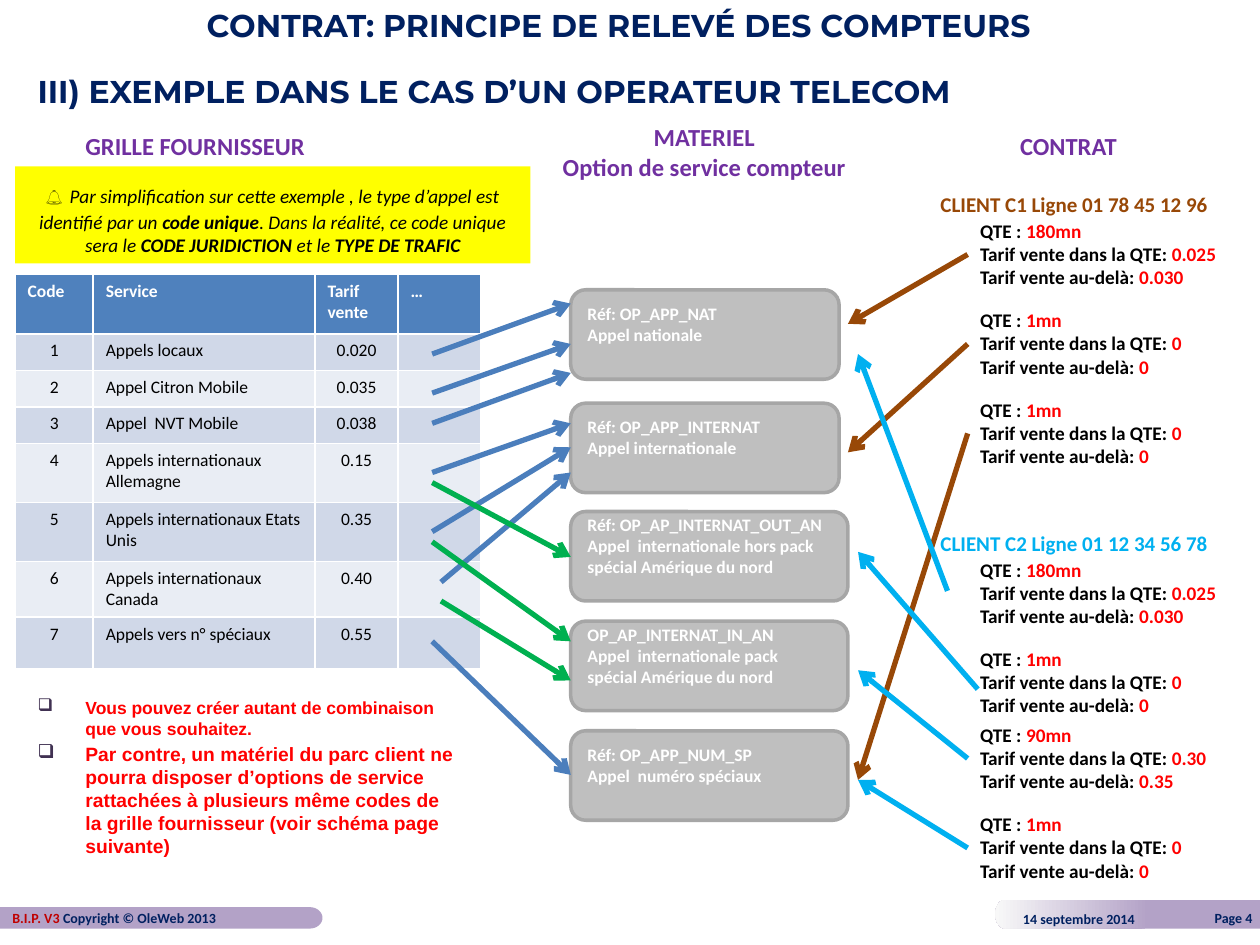
from math import cos, pi, sin

from lxml.etree import SubElement
from pptx import Presentation
from pptx.dml.color import RGBColor
from pptx.enum.shapes import MSO_CONNECTOR, MSO_SHAPE
from pptx.enum.text import MSO_ANCHOR as Anchor, MSO_AUTO_SIZE, PP_ALIGN as Align
from pptx.oxml.ns import qn
from pptx.util import Inches, Pt

COLOURS = {
    "navy": "002060", "purple": "7030A0", "lilac": "B3A2C7", "mist": "F8F8F8",
    "white": "FFFFFF", "black": "000000", "red": "FF0000", "dark red": "C00000",
    "yellow": "FFFF00", "header": "4F81BD", "odd": "D0D8E8", "even": "E9EDF4",
    "box": "BFBFBF", "box edge": "A6A6A6", "bullet": "403152",
    "blue": "4B7EBC", "green": "00B050", "brown": "984807", "cyan": "00B0F0",
}


def rgb(name):
    return RGBColor.from_string(COLOURS[name])


class SlideBuilder:
    font = "Calibri"
    arrow_width = Pt(3)

    def __init__(self, slide):
        self.slide = slide
        self.shapes = slide.shapes

    def fill_text(self, frame, paragraphs, size, colour="black", bold=True,
                  align=Align.LEFT, font=None, anchor=Anchor.TOP):
        """Each paragraph is a string or a list of (text, run colour)."""
        frame.word_wrap = True
        frame.vertical_anchor = anchor
        for index, content in enumerate(paragraphs):
            paragraph = frame.add_paragraph() if index else frame.paragraphs[0]
            runs = [(content, None)] if isinstance(content, str) else content
            for text, run_colour in runs:
                run = paragraph.add_run()
                run.text = text
                if run_colour:
                    run.font.color.rgb = rgb(run_colour)
            paragraph.alignment = align
            self.style(paragraph.font, size, bold, font)
            if len(runs) == 1:
                paragraph.font.color.rgb = rgb(runs[0][1] or colour)

    def style(self, font, size, bold, name=None):
        font.name, font.size, font.bold = name or self.font, Pt(size), bold

    def title(self, text, left, top, width, height):
        title = self.shapes.title
        title.left, title.top = Inches(left), Inches(top)
        title.width, title.height = Inches(width), Inches(height)
        title.text_frame.auto_size = MSO_AUTO_SIZE.NONE
        self.fill_text(title.text_frame, [text], 18, "navy", font="Montserrat")

    def text(self, left, top, width, height, paragraphs, size, **style):
        area = map(Inches, (left, top, width, height))
        frame = self.shapes.add_textbox(*area).text_frame
        self.fill_text(frame, paragraphs, size, **style)
        return frame

    def bullets(self, left, top, width, height, items):
        frame = self.text(left, top, width, height, [], 10)
        for index, (text, size) in enumerate(items):
            paragraph = frame.add_paragraph() if index else frame.paragraphs[0]
            paragraph.text = text
            if index:
                paragraph.space_before = Pt(2)
            properties = paragraph._p.get_or_add_pPr()
            properties.set("marL", str(Inches(0.38)))
            properties.set("indent", str(-Inches(0.38)))
            bullet_colour = SubElement(properties, qn("a:buClr"))
            SubElement(bullet_colour, qn("a:srgbClr"), val=COLOURS["bullet"])
            SubElement(properties, qn("a:buChar"), char="❑")
            self.style(paragraph.font, size, True, "Arial")
            paragraph.font.color.rgb = rgb("red")

    def shape(self, kind, left, top, width, height, fill, edge=None):
        shape = self.shapes.add_shape(kind, *map(Inches, (left, top, width, height)))
        shape.shadow.inherit = False
        shape.fill.solid()
        shape.fill.fore_color.rgb = rgb(fill)
        if edge:
            shape.line.color.rgb = rgb(edge)
            shape.line.width = Pt(2)
        else:
            shape.line.fill.background()
        return shape

    def option(self, top, width, lines):
        box = self.shape(MSO_SHAPE.ROUNDED_RECTANGLE, 4.53, top, width, 0.71,
                         "box", "box edge")
        box.text_frame.margin_bottom = Inches(0.22)
        self.fill_text(box.text_frame, lines, 10, "white", anchor=Anchor.MIDDLE)

    def arrow(self, colour, x1, y1, x2, y2):
        arrow = self.shapes.add_connector(
            MSO_CONNECTOR.STRAIGHT, *map(Inches, (x1, y1, x2, y2)))
        arrow.line.color.rgb = rgb(colour)
        arrow.line.width = self.arrow_width
        SubElement(arrow.line._get_or_add_ln(), qn("a:tailEnd"), type="arrow")
        SubElement(arrow._element.spPr, qn("a:effectLst"))

    def band(self, flat_x, round_x, top, bottom, bulge):
        """Footer band with one flat end and one rounded end."""
        middle, radius = (top + bottom) / 2, (bottom - top) / 2
        angles = [pi * (step / 16 - 0.5) for step in range(17)]
        arc = [(round_x + bulge * cos(a), middle + radius * sin(a)) for a in angles]
        outline = self.shapes.build_freeform(Inches(flat_x), Inches(top))
        outline.add_line_segments(
            [(Inches(x), Inches(y)) for x, y in arc + [(flat_x, bottom)]], close=True)
        band = outline.convert_to_shape()
        band.shadow.inherit = False
        band.line.fill.background()
        return band.fill

    def table(self, left, top, widths, heights, rows):
        area = map(Inches, (left, top, sum(widths), sum(heights)))
        table = self.shapes.add_table(len(rows), len(widths), *area).table
        for column, width in zip(table.columns, widths):
            column.width = Inches(width)
        for r, (values, height) in enumerate(zip(rows, heights)):
            table.rows[r].height = Inches(height)
            fill = "header" if r == 0 else "odd" if r % 2 else "even"
            for c, value in enumerate(values):
                cell = table.cell(r, c)
                cell.fill.solid()
                cell.fill.fore_color.rgb = rgb(fill)
                if value:
                    centred = r > 0 and c != 1
                    self.fill_text(cell.text_frame, [value], 10,
                                   "black" if r else "white", bold=r == 0,
                                   align=Align.CENTER if centred else Align.LEFT)
                else:
                    SubElement(cell.text_frame.paragraphs[0]._p,
                               qn("a:endParaRPr"), sz="1000")

    def contract(self, top, quantity, inside, beyond):
        terms = (("QTE : ", quantity), ("Tarif vente dans la QTE: ", inside),
                 ("Tarif vente au-delà: ", beyond))
        self.text(7.68, top, 2.28, 0.66,
                  [[(label, "black"), (value, "red")] for label, value in terms], 11)


def main():
    deck = Presentation()
    deck.slide_width, deck.slide_height = Inches(10), Inches(7.5)
    page = SlideBuilder(deck.slides.add_slide(deck.slide_layouts[5]))

    # Footer
    left_fill = page.band(0, 2.46, 7.2, 7.37, 0.1)
    left_fill.solid()
    left_fill.fore_color.rgb = rgb("lilac")
    right_fill = page.band(10, 7.98, 7.14, 7.37, -0.08)
    right_fill.gradient()
    right_fill.gradient_angle = 180
    for stop, (position, colour) in zip(right_fill.gradient_stops,
                                        ((0.42, "lilac"), (1, "mist"))):
        stop.position, stop.color.rgb = position, rgb(colour)
    page.text(0, 7.17, 2.56, 0.24,
              [[("B.I.P. V3 ", "dark red"), ("Copyright © OleWeb 2013", "navy")]], 8)
    page.text(8.02, 7.14, 1.29, 0.3, ["14 septembre 2014"], 8, colour="navy",
              anchor=Anchor.MIDDLE)
    page.text(9.26, 7.14, 0.78, 0.29, ["Page 4"], 8, colour="navy",
              align=Align.RIGHT, anchor=Anchor.MIDDLE)

    # Titles and column headings
    page.title("CONTRAT: PRINCIPE DE RELEVÉ DES COMPTEURS", 1.54, 0, 8.35, 0.39)
    page.text(0.2, 0.52, 9.53, 0.39, ["III) EXEMPLE DANS LE CAS D’UN OPERATEUR TELECOM"],
              18, colour="navy", font="Montserrat")
    for left, top, width, height, lines in (
            (0.45, 0.99, 2.2, 0.34, ["GRILLE FOURNISSEUR"]),
            (4.21, 0.92, 2.76, 0.57, ["MATERIEL", "Option de service compteur"]),
            (7.93, 0.99, 1.1, 0.34, ["CONTRAT"])):
        page.text(left, top, width, height, lines, 14, colour="purple", align=Align.CENTER)

    # Yellow note
    note = page.shape(MSO_SHAPE.RECTANGLE, 0.12, 1.32, 4.09, 0.77, "yellow").text_frame
    note.word_wrap = True
    note.vertical_anchor = Anchor.TOP
    remark = note.paragraphs[0]
    remark.alignment = Align.CENTER
    remark.font.name = page.font
    remark.font.color.rgb = rgb("black")
    for text, size, bold, italic in (
            ("🔔", 11, False, False), (" ", 18, False, True),
            ("Par simplification sur cette exemple , le type d’appel est "
             "identifié par un ", 11, False, True),
            ("code unique", 11, True, True),
            (". Dans la réalité, ce code unique sera le ", 11, False, True),
            ("CODE JURIDICTION ", 11, True, True), ("et le ", 11, False, True),
            ("TYPE DE TRAFIC", 11, True, True)):
        run = remark.add_run()
        run.text = text
        run.font.size, run.font.bold, run.font.italic = Pt(size), bold, italic

    # Supplier price grid
    services = (("Appels locaux", "0.020"), ("Appel Citron Mobile", "0.035"),
                ("Appel  NVT Mobile", "0.038"),
                ("Appels internationaux Allemagne", "0.15"),
                ("Appels internationaux Etats Unis", "0.35"),
                ("Appels internationaux Canada", "0.40"),
                ("Appels vers n° spéciaux", "0.55"))
    rows = [("Code", "Service", "Tarif vente", "…")]
    rows += [(str(code), *service, "") for code, service in enumerate(services, 1)]
    page.table(0.12, 2.18, (0.62, 1.76, 0.66, 0.66),
               (0.47, 0.29, 0.29, 0.29, 0.47, 0.47, 0.44, 0.41), rows)
    page.bullets(0.2, 5.48, 3.54, 1.5, (
        ("Vous pouvez créer autant de combinaison que vous souhaitez.", 10),
        ("Par contre, un matériel du parc client ne pourra disposer d’options de "
         "service rattachées à plusieurs même codes de la grille fournisseur "
         "(voir schéma page suivante)", 11)))

    # Service options
    for top, width, *lines in (
            (2.3, 2.13, "Réf: OP_APP_NAT", "Appel nationale"),
            (3.2, 2.13, "Réf: OP_APP_INTERNAT", "Appel internationale"),
            (4.06, 2.2, "Réf: OP_AP_INTERNAT_OUT_AN",
             "Appel  internationale hors pack spécial Amérique du nord"),
            (4.93, 2.2, "OP_AP_INTERNAT_IN_AN",
             "Appel  internationale pack spécial Amérique du nord"),
            (5.8, 2.2, "Réf: OP_APP_NUM_SP", "Appel  numéro spéciaux")):
        page.option(top, width, lines)

    # Arrows from the grid to the options
    for colour, x, y, end_y in (
            ("blue", 3.43, 2.81, 2.41), ("blue", 3.43, 3.12, 2.73),
            ("blue", 3.43, 3.36, 2.96), ("blue", 3.43, 3.75, 3.36),
            ("blue", 3.43, 4.22, 3.55), ("blue", 3.5, 4.62, 3.75),
            ("blue", 3.43, 5.09, 6.15), ("green", 3.43, 3.83, 4.42),
            ("green", 3.43, 4.3, 5.09), ("green", 3.5, 4.77, 5.4)):
        page.arrow(colour, x, y, 4.53, end_y)

    # Arrows from the contracts to the options
    for arrow in (("brown", 7.68, 2.02, 6.73, 2.57), ("brown", 7.68, 2.73, 6.73, 3.59),
                  ("brown", 7.68, 3.44, 6.81, 6.19), ("cyan", 7.52, 4.69, 6.81, 2.81),
                  ("cyan", 7.76, 5.47, 6.81, 4.38), ("cyan", 7.68, 6.02, 6.81, 5.32),
                  ("cyan", 7.68, 6.73, 6.81, 6.19)):
        page.arrow(*arrow)

    # Client contracts
    national, unit = ("180mn", "0.025", "0.030"), ("1mn", "0", "0")
    for top, client, colour, contracts in (
            (1.47, "CLIENT C1 Ligne 01 78 45 12 96", "brown",
             ((1.69, national), (2.4, unit), (3.11, unit))),
            (4.16, "CLIENT C2 Ligne 01 12 34 56 78", "cyan",
             ((4.38, national), (5.09, unit), (5.69, ("90mn", "0.30", "0.35")),
              (6.4, unit)))):
        page.text(7.05, top, 2.95, 0.3, [client], 12, colour=colour, align=Align.CENTER)
        for contract_top, terms in contracts:
            page.contract(contract_top, *terms)

    deck.save("out.pptx")


if __name__ == "__main__":
    main()
